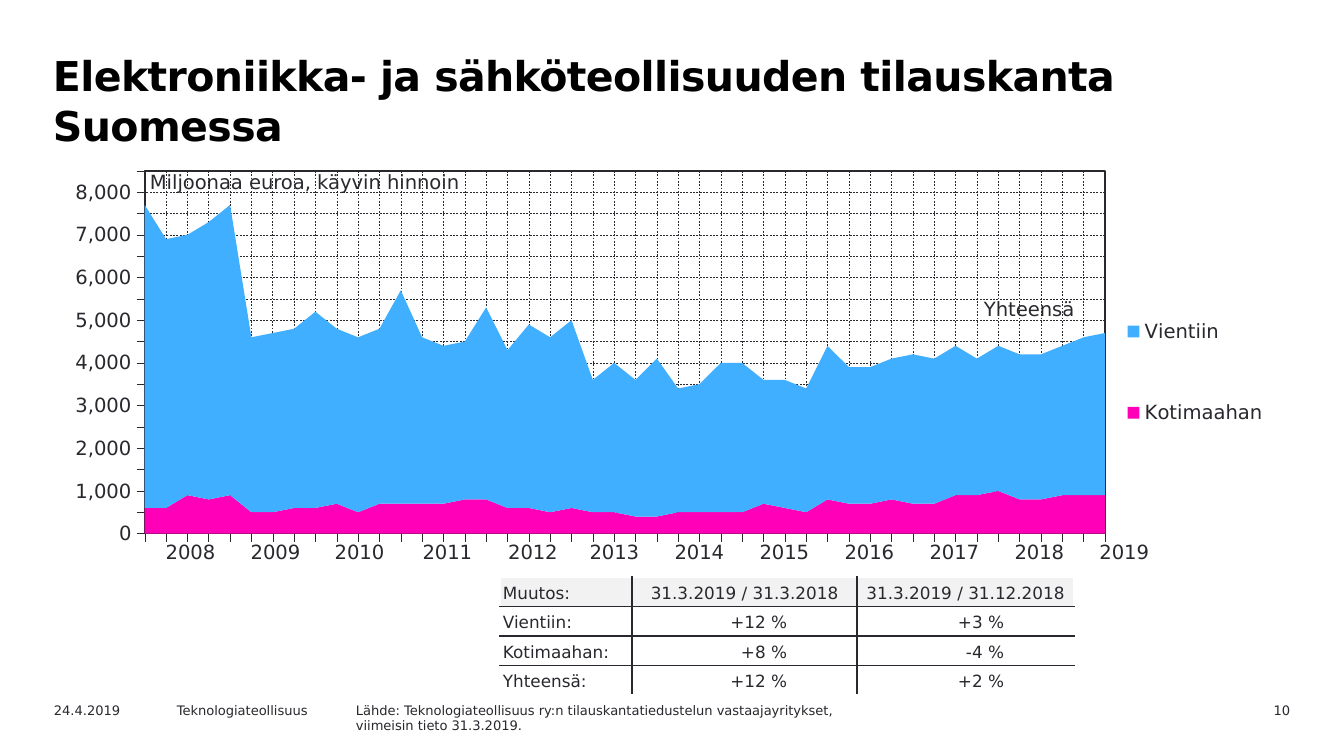
import dataclasses

import lxml.etree
import pptx
import pptx.chart.data
import pptx.dml.color
import pptx.enum.chart
import pptx.enum.dml
import pptx.enum.text
import pptx.oxml.ns
import pptx.util

PX_PER_INCH = 134.4
ALIGN = pptx.enum.text.PP_ALIGN
ANCHOR = pptx.enum.text.MSO_ANCHOR


@dataclasses.dataclass(frozen=True)
class Theme:
    """Colours, font and type sizes of the slide."""
    font: str = "DejaVu Sans"
    heading: str = "000000"
    ink: str = "29282E"
    paper: str = "FFFFFF"
    header: str = "F2F2F2"
    domestic: str = "FF00B8"
    export: str = "40AFFF"
    title_size: float = 22
    label_size: float = 10.5
    table_size: float = 9
    footer_size: float = 7


THEME = Theme()

EXPORT = [7100, 6300, 6100, 6500, 6800, 4100, 4200, 4200, 4600, 4100, 4100, 4100,
          5000, 3900, 3700, 3700, 4500, 3700, 4300, 4100, 4400, 3100, 3500, 3200,
          3700, 2900, 3000, 3500, 3500, 2900, 3000, 2900, 3600, 3200, 3200, 3300,
          3500, 3400, 3500, 3200, 3400, 3400, 3400, 3500, 3700, 3800]
DOMESTIC = [600, 600, 900, 800, 900, 500, 500, 600, 600, 700, 500, 700,
            700, 700, 700, 800, 800, 600, 600, 500, 600, 500, 500, 400,
            400, 500, 500, 500, 500, 700, 600, 500, 800, 700, 700, 800,
            700, 700, 900, 900, 1000, 800, 800, 900, 900, 900]
CHANGES = [["Muutos:", "31.3.2019 / 31.3.2018", "31.3.2019 / 31.12.2018"],
           ["Vientiin:", "+12 %", "+3 %"],
           ["Kotimaahan:", "+8 %", "-4 %"],
           ["Yhteensä:", "+12 %", "+2 %"]]


def px(length):
    """Turn px into EMU."""
    return pptx.util.Emu(round(length * 914400 / PX_PER_INCH))


def rgb(colour):
    """Turn a hex string into a colour."""
    return pptx.dml.color.RGBColor.from_string(colour)


def set_font(font, size, colour=THEME.ink, bold=False):
    """Format a font of a run or of a chart part."""
    font.name, font.size, font.bold = THEME.font, pptx.util.Pt(size), bold
    font.color.rgb = rgb(colour)


def write(holder, text, size=THEME.label_size, colour=THEME.ink, bold=False,
          align=ALIGN.LEFT, anchor=ANCHOR.TOP, margins=(13, 7, 13, 7), wrap=True,
          line=None, tracking=None):
    """Write lines of text into a shape or a table cell."""
    frame = holder.text_frame
    target = holder if hasattr(holder, "is_spanned") else frame
    (target.margin_left, target.margin_top,
     target.margin_right, target.margin_bottom) = map(px, margins)
    target.vertical_anchor = anchor
    frame.word_wrap = wrap
    for index, words in enumerate(text.split("\n")):
        paragraph = frame.add_paragraph() if index else frame.paragraphs[0]
        paragraph.alignment = align
        paragraph.space_before = pptx.util.Pt(0)
        if line:
            paragraph.line_spacing = pptx.util.Pt(line)
        run = paragraph.add_run()
        run.text = words
        set_font(run.font, size, colour, bold)
        if tracking:
            run._r.get_or_add_rPr().set("spc", str(round(tracking * 100)))


def add_label(slide, box, text, **formats):
    """Add a text box."""
    write(slide.shapes.add_textbox(*map(px, box)), text, **formats)


def set_border(cell, side, colour=None):
    """Draw one side of a cell, or clear it when there is no colour."""
    properties = cell._tc.get_or_add_tcPr()
    border = lxml.etree.SubElement(properties, pptx.oxml.ns.qn(f"a:ln{side}"), w="12700")
    fill = lxml.etree.SubElement(
        border, pptx.oxml.ns.qn("a:solidFill" if colour else "a:noFill"))
    if colour:
        lxml.etree.SubElement(fill, pptx.oxml.ns.qn("a:srgbClr"), val=colour)


def add_grid(slide, box, rows, columns):
    """Add an unbanded table with the given column widths."""
    table = slide.shapes.add_table(rows, len(columns), *map(px, box)).table
    table.first_row = table.horz_banding = False
    for column, width in zip(table.columns, columns):
        column.width = px(width)
    for row in table.rows:
        row.height = px(box[3] / rows)
    return table


def set_layout(element, position, layout, inner=False):
    """Fix the place of a chart part by fractions of the chart."""
    tag = pptx.oxml.ns.qn
    holder = element.find(tag("c:layout"))
    if holder is None:
        holder = lxml.etree.Element(tag("c:layout"))
        element.insert(position, holder)
    manual = lxml.etree.SubElement(holder, tag("c:manualLayout"))
    settings = [("layoutTarget", "inner")] if inner else []
    settings += [("xMode", "edge"), ("yMode", "edge")]
    settings += list(zip("xywh", layout))
    for name, value in settings:
        lxml.etree.SubElement(manual, tag(f"c:{name}"), val=str(value))


def set_line(line, width, dash=None):
    """Format a chart line in the ink colour."""
    line.color.rgb = rgb(THEME.ink)
    line.width = pptx.util.Pt(width)
    if dash:
        line.dash_style = dash


def add_heading(slide, box):
    """Place the slide title."""
    title = slide.shapes.title
    title.left, title.top, title.width, title.height = map(px, box)
    write(title, "Elektroniikka- ja sähköteollisuuden tilauskanta Suomessa",
          size=THEME.title_size, colour=THEME.heading, bold=True,
          margins=(15, 7, 13, 7), line=27, tracking=-0.3)
    title.text_frame.auto_size = pptx.enum.text.MSO_AUTO_SIZE.NONE


def add_order_book(slide, box):
    """Place the stacked area chart with its captions and year row."""
    left, top, _, _ = box
    orders = pptx.chart.data.CategoryChartData(number_format="#,##0")
    orders.categories = [str(quarter + 1) for quarter in range(len(EXPORT))]
    orders.add_series("Kotimaahan", DOMESTIC)
    orders.add_series("Vientiin", EXPORT)
    chart = slide.shapes.add_chart(
        pptx.enum.chart.XL_CHART_TYPE.AREA_STACKED, *map(px, box), orders).chart
    chart.has_title = False
    set_font(chart.font, THEME.label_size)
    chart.plots[0].vary_by_categories = False
    for series, colour in zip(chart.plots[0].series, (THEME.domestic, THEME.export)):
        series.format.fill.solid()
        series.format.fill.fore_color.rgb = rgb(colour)
    for axis in (chart.category_axis, chart.value_axis):
        axis.major_tick_mark = pptx.enum.chart.XL_TICK_MARK.OUTSIDE
        axis.minor_tick_mark = pptx.enum.chart.XL_TICK_MARK.NONE
        axis.has_major_gridlines = True
        set_line(axis.format.line, 0.22)
        set_line(axis.major_gridlines.format.line, 0.25,
                 pptx.enum.dml.MSO_LINE.DASH)
    chart.category_axis.tick_label_position = pptx.enum.chart.XL_TICK_LABEL_POSITION.NONE
    values = chart.value_axis
    values.minimum_scale, values.maximum_scale, values.major_unit = 0, 8500, 500
    values.tick_labels.number_format = "#,##0"
    values.tick_labels.number_format_is_linked = False
    set_font(values.tick_labels.font, THEME.label_size)
    chart.has_legend = True
    chart.legend.position = pptx.enum.chart.XL_LEGEND_POSITION.RIGHT
    chart.legend.include_in_layout = False
    set_font(chart.legend.font, THEME.label_size)
    set_layout(chart.legend._element, 1, (0.86, 0.25, 0.13, 0.54))
    plot_area = chart._chartSpace.chart.plotArea
    set_layout(plot_area, 0, (0.075, 0.029, 0.777, 0.885), inner=True)
    frame = lxml.etree.SubElement(plot_area, pptx.oxml.ns.qn("c:spPr"))
    lxml.etree.SubElement(frame, pptx.oxml.ns.qn("a:noFill"))
    outline = lxml.etree.SubElement(frame, pptx.oxml.ns.qn("a:ln"), w="9525")
    ink = lxml.etree.SubElement(outline, pptx.oxml.ns.qn("a:solidFill"))
    lxml.etree.SubElement(ink, pptx.oxml.ns.qn("a:srgbClr"), val=THEME.ink)

    add_label(slide, (left + 86, top + 4, 349, 36), "Miljoonaa euroa, käyvin hinnoin",
              margins=(12, 7, 12, 7), wrap=False)
    add_label(slide, (left + 920, top + 133, 142, 36), "Yhteensä", margins=(12, 5, 12, 5))
    widths = [85, 85, 83, 93, 78] + [85] * 7
    years = add_grid(slide, (left + 96, top + 375, sum(widths), 43), 1, widths)
    for year, cell in enumerate(years.iter_cells(), 2008):
        for side in "LRTB":
            set_border(cell, side)
        cell.fill.background()
        write(cell, str(year), align=ALIGN.CENTER)


def add_changes(slide, box):
    """Place the table of changes, ruled on its inside only."""
    table = add_grid(slide, box, len(CHANGES), (132, 225, box[2] - 357))
    last_row, last_column = len(CHANGES) - 1, len(CHANGES[0]) - 1
    for r, row in enumerate(CHANGES):
        for c, text in enumerate(row):
            cell = table.cell(r, c)
            inside = {"L": c > 0, "R": c < last_column, "T": r > 0, "B": r < last_row}
            for side, ruled in inside.items():
                set_border(cell, side, THEME.ink if ruled else THEME.paper)
            cell.fill.solid()
            cell.fill.fore_color.rgb = rgb(THEME.paper if r else THEME.header)
            figure = r > 0 and c > 0
            align = ALIGN.RIGHT if figure else ALIGN.CENTER if c else ALIGN.LEFT
            write(cell, text, size=THEME.table_size, align=align, anchor=ANCHOR.BOTTOM,
                  margins=(3, 3, 70 if figure else 3, 3))


def add_footer(slide, box):
    """Place the date, publisher, source and page number."""
    left, top, width, height = box
    source = ("Lähde: Teknologiateollisuus ry:n tilauskantatiedustelun "
              "vastaajayritykset,\nviimeisin tieto 31.3.2019.")
    for offset, span, text, align in (
            (0, 134, "24.4.2019", ALIGN.LEFT),
            (123, 191, "Teknologiateollisuus", ALIGN.LEFT),
            (302, 672, source, ALIGN.LEFT),
            (width - 126, 126, "10", ALIGN.RIGHT)):
        add_label(slide, (left + offset, top, span, height), text,
                  size=THEME.footer_size, align=align)


def main():
    """Build and save the slide."""
    deck = pptx.Presentation()
    deck.slide_width, deck.slide_height = px(1344), px(756)
    slide = deck.slides.add_slide(deck.slide_layouts[5])
    add_heading(slide, (38, 42, 1175, 95))
    add_order_book(slide, (52, 159, 1236, 410))
    add_changes(slide, (500, 577, 574, 118))
    add_footer(slide, (41, 695, 1262, 35))
    deck.save("out.pptx")


if __name__ == "__main__":
    main()
